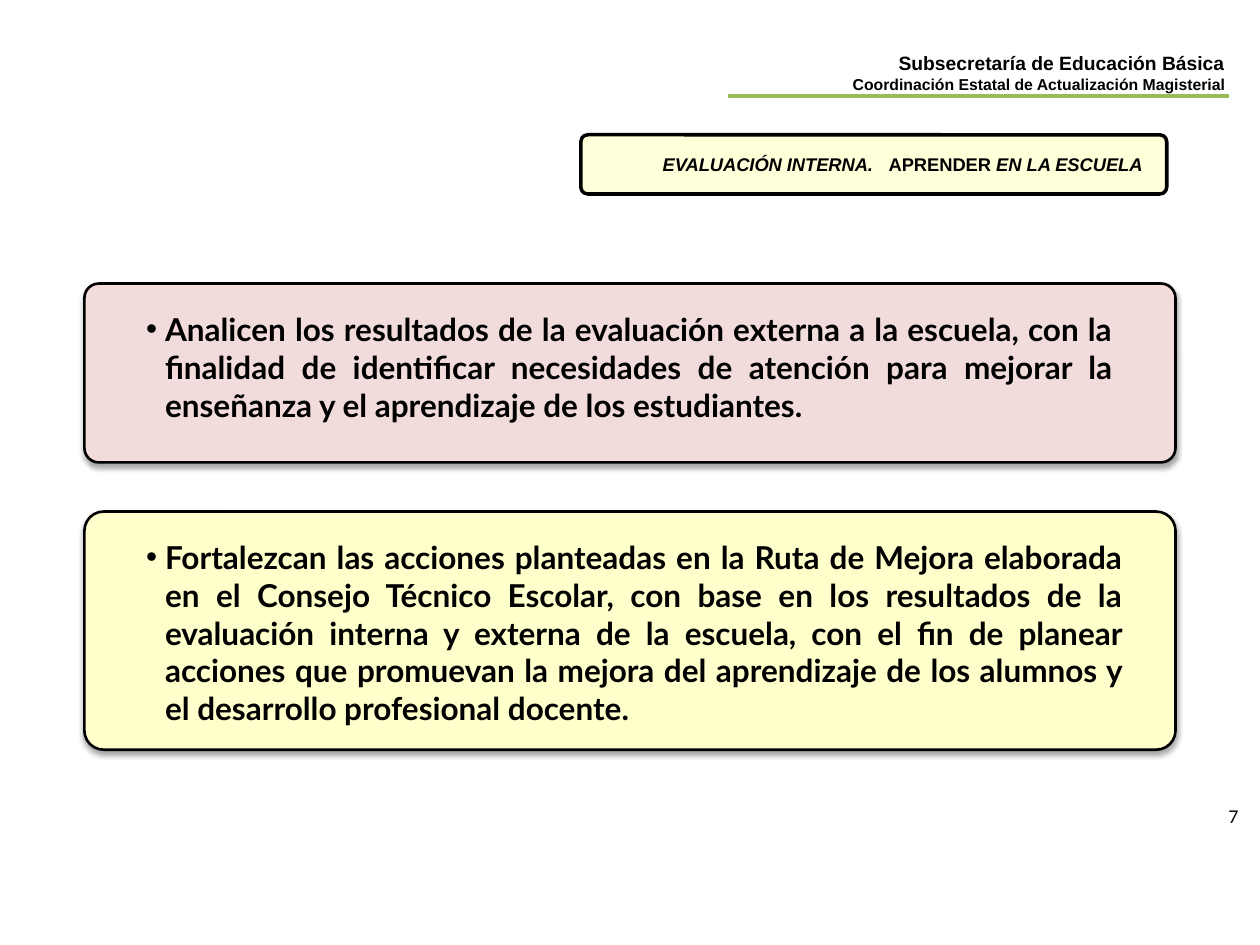
from lxml import etree
from pptx import Presentation
from pptx.dml.color import RGBColor
from pptx.enum import shapes, text
from pptx.oxml import parse_xml
from pptx.oxml.ns import nsdecls, qn
from pptx.util import Inches, Pt

COLORS = {"ink": "000000", "green": "9BBB59", "pink": "F2DCDB",
          "yellow": "FFFFCC", "cream": "FFFFD9"}
RIGHT = text.PP_ALIGN.RIGHT


def add_span(para, words, **formats):
    span = para.add_run()
    span.text = words
    for name, value in formats.items():
        setattr(span.font, name, value)
    span.font.color.rgb = RGBColor.from_string(COLORS["ink"])
    return span


def add_card(page, left, top, width, height, fill, radius, weight):
    card = page.shapes.add_shape(shapes.MSO_SHAPE.ROUNDED_RECTANGLE, Inches(left),
                                 Inches(top), Inches(width), Inches(height))
    card.adjustments[0] = radius
    card.shadow.inherit = False
    card.fill.solid()
    card.fill.fore_color.rgb = RGBColor.from_string(COLORS[fill])
    card.line.color.rgb = RGBColor.from_string(COLORS["ink"])
    card.line.width = Pt(weight)
    return card


deck = Presentation()
deck.slide_width, deck.slide_height = Inches(10), Inches(7.5)
page = deck.slides.add_slide(deck.slide_layouts.get_by_name("Two Content"))
title, *bodies = list(page.placeholders)[:3]

# Office name and green rule
header = page.shapes.add_textbox(Inches(4.03), Inches(0.36), Inches(5.79), Inches(0.44))
header.text_frame.word_wrap = True
lines = [("Subsecretaría de Educación Básica", 11),
         ("Coordinación Estatal de Actualización Magisterial", 9)]
for index, (words, size) in enumerate(lines):
    para = header.text_frame.add_paragraph() if index else header.text_frame.paragraphs[0]
    para.alignment = RIGHT
    add_span(para, words, name="Arial", size=Pt(size), bold=True)

rule = page.shapes.add_connector(shapes.MSO_CONNECTOR.STRAIGHT, Inches(9.75),
                                 Inches(0.76), Inches(5.78), Inches(0.76))
rule.line.color.rgb = RGBColor.from_string(COLORS["green"])
rule.line.width = Pt(2.25)
etree.SubElement(rule._element.spPr, qn("a:effectLst"))

# Bulleted cards with a soft shadow
cards = [
    (2.25, 1.42, "pink", 7.87, 1.01,
     "Analicen los resultados de la evaluación externa a la escuela, con la finalidad "
     "de identificar necesidades de atención para mejorar la enseñanza y el "
     "aprendizaje de los estudiantes."),
    (4.06, 1.89, "yellow", 7.95, 1.62,
     "Fortalezcan las acciones planteadas en la Ruta de Mejora elaborada en el Consejo "
     "Técnico Escolar, con base en los resultados de la evaluación interna y externa "
     "de la escuela, con el fin de planear acciones que promuevan la mejora del "
     "aprendizaje de los alumnos y el desarrollo profesional docente."),
]
for body, (top, height, fill, text_width, text_height, words) in zip(bodies, cards):
    card = add_card(page, 0.67, top, 8.66, height, fill, 0.081, 1.5)
    card._element.spPr.find(qn("a:effectLst")).append(parse_xml(
        f'<a:outerShdw {nsdecls("a")} blurRad="{Pt(3.1)}" dist="{Pt(1.8)}" '
        'dir="5400000" rotWithShape="0"><a:srgbClr val="000000">'
        '<a:alpha val="35000"/></a:srgbClr></a:outerShdw>'))

    body.left, body.top = Inches(1.06), Inches(top + 0.16)
    body.width, body.height = Inches(text_width), Inches(text_height)
    body.text_frame.auto_size = text.MSO_AUTO_SIZE.NONE
    para = body.text_frame.paragraphs[0]
    para.alignment = text.PP_ALIGN.JUSTIFY
    para.space_before = Pt(0)
    props = para._p.get_or_add_pPr()
    props.set("marL", str(Inches(0.15)))
    props.set("indent", str(Inches(-0.15)))
    etree.SubElement(props, qn("a:buFont"), typeface="Arial")
    etree.SubElement(props, qn("a:buChar"), char="•")
    add_span(para, words, name="Lato", size=Pt(18), bold=True)
    page.shapes._spTree.append(body._element)  # text in front of its card

# Page number
number = page.shapes.add_textbox(Inches(9.65), Inches(6.35), Inches(0.35), Inches(0.27))
add_span(number.text_frame.paragraphs[0], "7", name="Lato", size=Pt(10))

# Section title
add_card(page, 4.61, 1.07, 4.65, 0.47, "cream", 0.117, 2)
title.left, title.top = Inches(4.76), Inches(1.07)
title.width, title.height = Inches(4.41), Inches(0.47)
title.text_frame.auto_size = text.MSO_AUTO_SIZE.NONE
title.text_frame.vertical_anchor = text.MSO_ANCHOR.MIDDLE
para = title.text_frame.paragraphs[0]
para.alignment = RIGHT
style = {"name": "Arial", "size": Pt(10.5), "bold": True}
add_span(para, "EVALUACIÓN INTERNA.", italic=True, **style)
gap = add_span(para, " ", italic=True, **style)
gap._r.get_or_add_rPr().set("spc", "580")  # wide gap between the two parts
add_span(para, "APRENDER", italic=False, **style)
add_span(para, " EN LA ESCUELA", italic=True, **style)
page.shapes._spTree.append(title._element)

deck.save("out.pptx")
